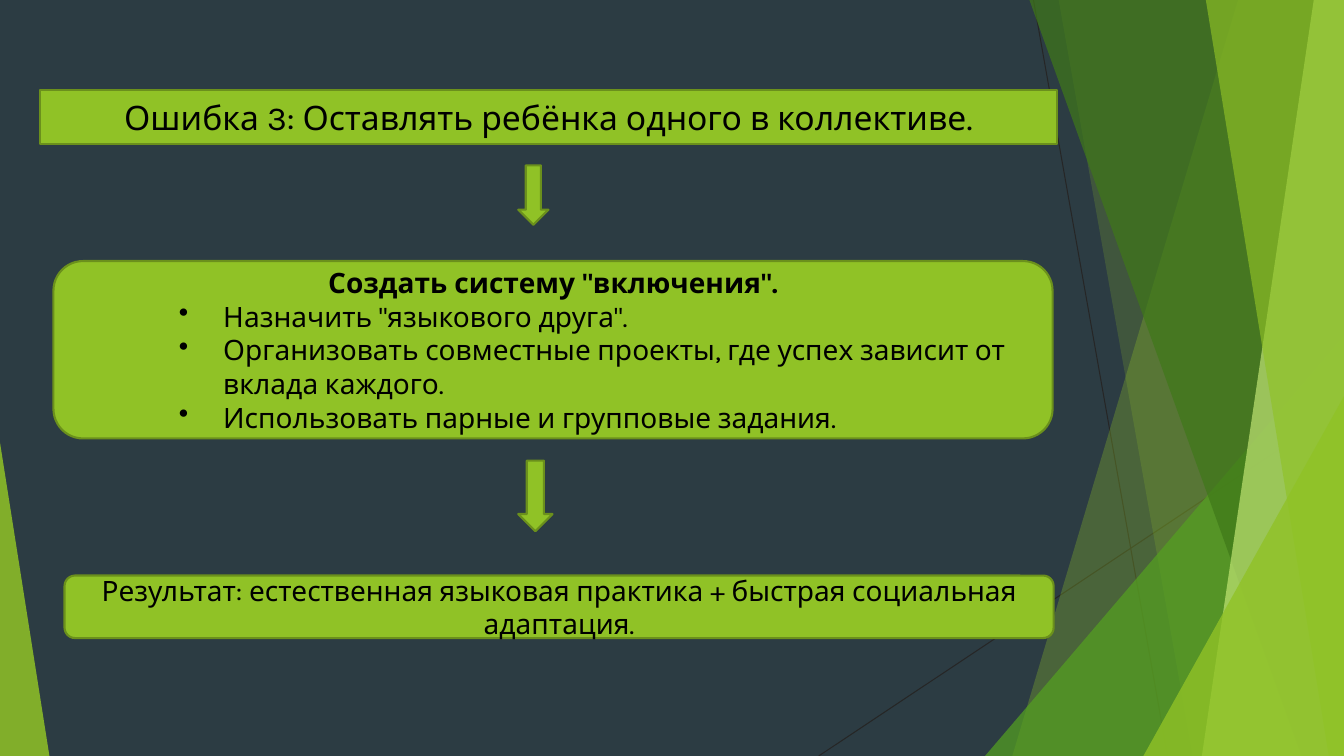
from lxml.etree import SubElement
from pptx import Presentation
from pptx.dml.color import RGBColor
from pptx.enum.shapes import MSO_CONNECTOR, MSO_SHAPE
from pptx.enum.text import MSO_ANCHOR, MSO_AUTO_SIZE, PP_ALIGN
from pptx.oxml import parse_xml
from pptx.oxml.ns import nsdecls, qn
from pptx.util import Inches, Pt

WIDTH, HEIGHT = 13.33, 7.5
FONT = "Karla"
SLATE = RGBColor(0x2C, 0x3C, 0x43)
CHARCOAL = RGBColor(0x26, 0x26, 0x26)
LIME = RGBColor(0x90, 0xC2, 0x26)
OLIVE = RGBColor(0x6B, 0x90, 0x1C)
GREEN = RGBColor(0x54, 0xA0, 0x21)
FOREST = RGBColor(0x3F, 0x78, 0x19)
PALE = RGBColor(0xC0, 0xE4, 0x74)
BLACK = RGBColor(0, 0, 0)

ERROR = "Ошибка 3: Оставлять ребёнка одного в коллективе."
SOLUTION = 'Создать систему "включения".'
STEPS = [
    'Назначить "языкового друга".',
    "Организовать совместные проекты, где успех зависит от вклада каждого.",
    "Использовать парные и групповые задания.",
]
RESULT = "Результат: естественная языковая практика + быстрая социальная адаптация."


def tint(sp, color, opacity):
    """Fill a borderless shape with a colour at an opacity in percent."""
    sp.shadow.inherit = False
    sp.line.fill.background()
    sp.fill.solid()
    sp.fill.fore_color.rgb = color
    clr = sp.fill._xPr.find(qn("a:solidFill"))[0]
    SubElement(clr, qn("a:alpha")).set("val", str(opacity * 1000))


def add_ray(s, x1, y1, x2, y2):
    ray = s.shapes.add_connector(
        MSO_CONNECTOR.STRAIGHT, Inches(x1), Inches(y1), Inches(x2), Inches(y2))
    ray.line.color.rgb = CHARCOAL
    ray.line.width = Pt(0.75)
    SubElement(ray._element.spPr, qn("a:effectLst"))


def add_facet(s, top, bottom, color, opacity):
    """Fill the area from a slanted left edge to the slide's right side."""
    builder = s.shapes.build_freeform(Inches(top), 0)
    builder.add_line_segments([(Inches(x), Inches(y)) for x, y in (
        (WIDTH, 0), (WIDTH, HEIGHT), (bottom, HEIGHT))])
    tint(builder.convert_to_shape(), color, opacity)


def add_corner(s, left, top, width, apex, color, opacity):
    """Add a right triangle standing on the slide's bottom edge."""
    sp = s.shapes.add_shape(MSO_SHAPE.ISOSCELES_TRIANGLE, Inches(left),
                            Inches(top), Inches(width), Inches(HEIGHT - top))
    sp.adjustments[0] = apex
    tint(sp, color, opacity)


def add_backdrop(s):
    s.background.fill.solid()
    s.background.fill.fore_color.rgb = SLATE
    add_ray(s, 10.25, 0, 11.58, HEIGHT)
    add_ray(s, WIDTH, 4.03, 8.12, HEIGHT)
    add_facet(s, 12.28, 10.04, LIME, 30)
    add_facet(s, 10.5, 11.83, LIME, 20)
    add_corner(s, 9.77, 3.33, 3.56, 1, GREEN, 72)
    add_facet(s, 10.21, 12.91, FOREST, 70)
    add_facet(s, 13.03, 11.92, PALE, 70)
    add_facet(s, 11.96, 13.18, LIME, 65)
    add_corner(s, 11.34, 3.93, 1.99, 1, LIME, 80)
    add_corner(s, 0, 4.39, 0.49, 0, LIME, 85)


def paint(sp):
    sp.fill.solid()
    sp.fill.fore_color.rgb = LIME
    sp.line.color.rgb = OLIVE
    sp.line.width = Pt(1.5)


def add_block(s, kind, box):
    sp = s.shapes.add_shape(kind, *map(Inches, box))
    sp.shadow.inherit = False
    paint(sp)
    return sp


def prepare_text(sp):
    tf = sp.text_frame
    tf.word_wrap = True
    tf.auto_size = MSO_AUTO_SIZE.NONE
    tf.vertical_anchor = MSO_ANCHOR.MIDDLE
    return tf


def write(p, text, size, bold=False, align=PP_ALIGN.CENTER):
    p.alignment = align
    r = p.add_run()
    r.text = text
    r.font.name = FONT
    r.font.size = Pt(size)
    r.font.bold = bold
    r.font.color.rgb = BLACK


def add_bullet(p, indent, hanging):
    pPr = p._p.get_or_add_pPr()
    pPr.set("marL", str(Inches(indent)))
    pPr.set("indent", str(-Inches(hanging)))
    SubElement(pPr, qn("a:buChar")).set("char", "•")


def place_title(s, box):
    title = s.shapes.title
    title.left, title.top, title.width, title.height = map(Inches, box)
    title._element.spPr.append(parse_xml(
        f'<a:prstGeom {nsdecls("a")} prst="roundRect"><a:avLst/></a:prstGeom>'))
    paint(title)
    write(prepare_text(title).paragraphs[0], ERROR, 24)
    s.shapes._spTree.append(title._element)  # in front of the backdrop


def add_solution(s, box):
    tf = prepare_text(add_block(s, MSO_SHAPE.ROUNDED_RECTANGLE, box))
    write(tf.paragraphs[0], SOLUTION, 20, bold=True)
    for step in STEPS:
        p = tf.add_paragraph()
        write(p, step, 20, align=PP_ALIGN.LEFT)
        add_bullet(p, 1.5, 0.44)


def add_result(s, box):
    tf = prepare_text(add_block(s, MSO_SHAPE.ROUNDED_RECTANGLE, box))
    write(tf.paragraphs[0], RESULT, 20)


def main():
    prs = Presentation()
    prs.slide_width, prs.slide_height = Inches(WIDTH), Inches(HEIGHT)
    s = prs.slides.add_slide(prs.slide_layouts[5])
    add_backdrop(s)
    place_title(s, (0.4, 0.89, 10.08, 0.54))
    add_block(s, MSO_SHAPE.DOWN_ARROW, (5.14, 1.64, 0.3, 0.59))
    add_solution(s, (0.53, 2.59, 9.91, 1.76))
    add_block(s, MSO_SHAPE.DOWN_ARROW, (5.14, 4.57, 0.34, 0.7))
    add_result(s, (0.64, 5.71, 9.81, 0.62))
    prs.save("out.pptx")


if __name__ == "__main__":
    main()
